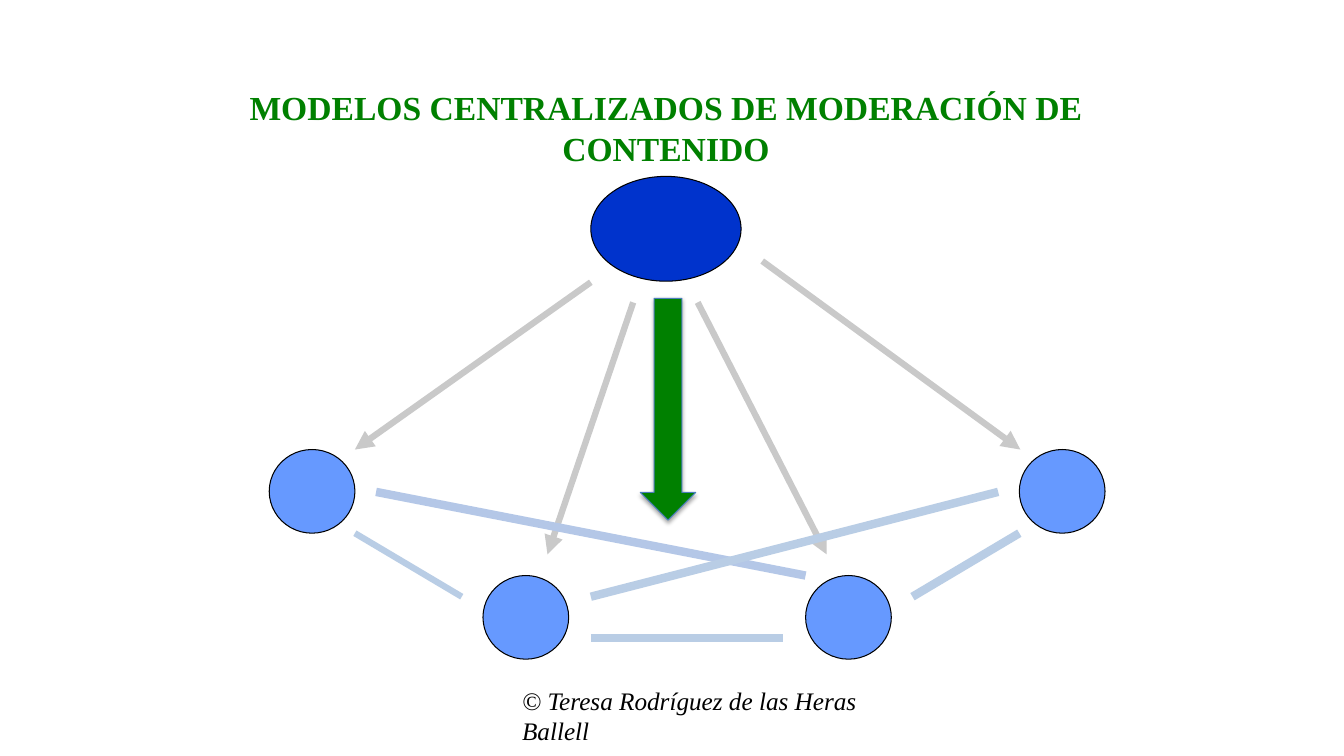
from lxml import etree
from pptx import Presentation
from pptx.dml.color import RGBColor
from pptx.enum.shapes import MSO_CONNECTOR, MSO_SHAPE
from pptx.enum.text import MSO_ANCHOR, PP_ALIGN
from pptx.oxml import parse_xml
from pptx.oxml.ns import nsdecls, qn
from pptx.util import Inches, Pt

STRAIGHT = MSO_CONNECTOR.STRAIGHT
OVAL = MSO_SHAPE.OVAL
DOWN_ARROW = MSO_SHAPE.DOWN_ARROW
MIDDLE = MSO_ANCHOR.MIDDLE
TOP = MSO_ANCHOR.TOP
CENTER = PP_ALIGN.CENTER
LEFT = PP_ALIGN.LEFT

FONT = "Times New Roman"
COLORS = {
    "platform": "0033CC",
    "user": "6699FF",
    "outline": "000000",
    "control": "C9C9C9",
    "exchange": "B9CDE5",
    "long_exchange": "B4C7E7",
    "moderation": "008000",
    "moderation_edge": "4A7EBB",
    "author": "000000",
}


def color(name):
    return RGBColor.from_string(COLORS[name])


def write(frame, text, *, size, ink, bold=False, italic=False, align=LEFT, anchor=TOP):
    frame.word_wrap = True
    frame.vertical_anchor = anchor
    paragraph = frame.paragraphs[0]
    paragraph.alignment = align
    run = paragraph.add_run()
    run.text = text
    run.font.name = FONT
    run.font.size = Pt(size)
    run.font.bold = bold
    run.font.italic = italic
    run.font.color.rgb = color(ink)


class Diagram:
    def __init__(self, slide):
        self.slide = slide

    def title(self, text, left, top, width, height):
        heading = self.slide.shapes.title
        heading.left, heading.top = Inches(left), Inches(top)
        heading.width, heading.height = Inches(width), Inches(height)
        write(heading.text_frame, text, size=24, ink="moderation", bold=True,
              align=CENTER, anchor=MIDDLE)

    def caption(self, text, left, top, width, height):
        box = self.slide.shapes.add_textbox(
            Inches(left), Inches(top), Inches(width), Inches(height))
        write(box.text_frame, text, size=18, ink="author", italic=True)

    def shape(self, kind, left, top, width, height, fill, edge="outline"):
        figure = self.slide.shapes.add_shape(
            kind, Inches(left), Inches(top), Inches(width), Inches(height))
        figure.shadow.inherit = False
        figure.fill.solid()
        figure.fill.fore_color.rgb = color(fill)
        figure.line.color.rgb = color(edge)
        figure.line.width = Pt(0.75)
        return figure

    def soft_shadow(self, figure):
        effects = figure._element.spPr.find(qn("a:effectLst"))
        effects.append(parse_xml(
            f'<a:outerShdw {nsdecls("a")} blurRad="{Pt(3.1)}" dist="{Pt(1.8)}" '
            'dir="5400000" rotWithShape="0"><a:srgbClr val="000000">'
            '<a:alpha val="35000"/></a:srgbClr></a:outerShdw>'))

    def link(self, start, end, ink, weight, arrow=False):
        connector = self.slide.shapes.add_connector(
            STRAIGHT, *(Inches(value) for value in (*start, *end)))
        connector.line.color.rgb = color(ink)
        connector.line.width = Pt(weight)
        if arrow:
            etree.SubElement(connector.line._get_or_add_ln(), qn("a:tailEnd"), type="triangle")
        etree.SubElement(connector._element.spPr, qn("a:effectLst"))


def main():
    deck = Presentation()
    deck.slide_width, deck.slide_height = Inches(13.33), Inches(7.5)
    diagram = Diagram(deck.slides.add_slide(deck.slide_layouts[5]))

    diagram.shape(OVAL, 5.86, 1.75, 1.49, 1.04, "platform")
    for left, top in ((2.67, 4.46), (4.79, 5.71), (7.99, 5.71), (10.11, 4.46)):
        diagram.shape(OVAL, left, top, 0.85, 0.83, "user")

    controls = (
        ((5.86, 2.8), (3.52, 4.46)),
        ((6.28, 3), (5.43, 5.5)),
        ((6.92, 3), (8.2, 5.5)),
        ((7.56, 2.59), (10.12, 4.46)),
    )
    for start, end in controls:
        diagram.link(start, end, "control", 4.5, arrow=True)

    exchanges = (
        ((3.52, 5.29), (4.58, 5.92), "exchange", 4.5),
        ((5.86, 6.33), (7.77, 6.33), "exchange", 6),
        ((9.05, 5.92), (10.11, 5.29), "exchange", 6),
        ((3.73, 4.88), (7.99, 5.71), "long_exchange", 6),
        ((5.86, 5.92), (9.9, 4.88), "exchange", 6),
    )
    for exchange in exchanges:
        diagram.link(*exchange)

    diagram.title("MODELOS CENTRALIZADOS DE MODERACIÓN DE CONTENIDO", 1.96, 0.81, 9.29, 0.91)
    moderation = diagram.shape(
        DOWN_ARROW, 6.35, 2.96, 0.55, 2.2, "moderation", "moderation_edge")
    diagram.soft_shadow(moderation)
    diagram.caption("© Teresa Rodríguez de las Heras Ballell", 5.08, 6.75, 3.64, 0.4)

    deck.save("out.pptx")


if __name__ == "__main__":
    main()
